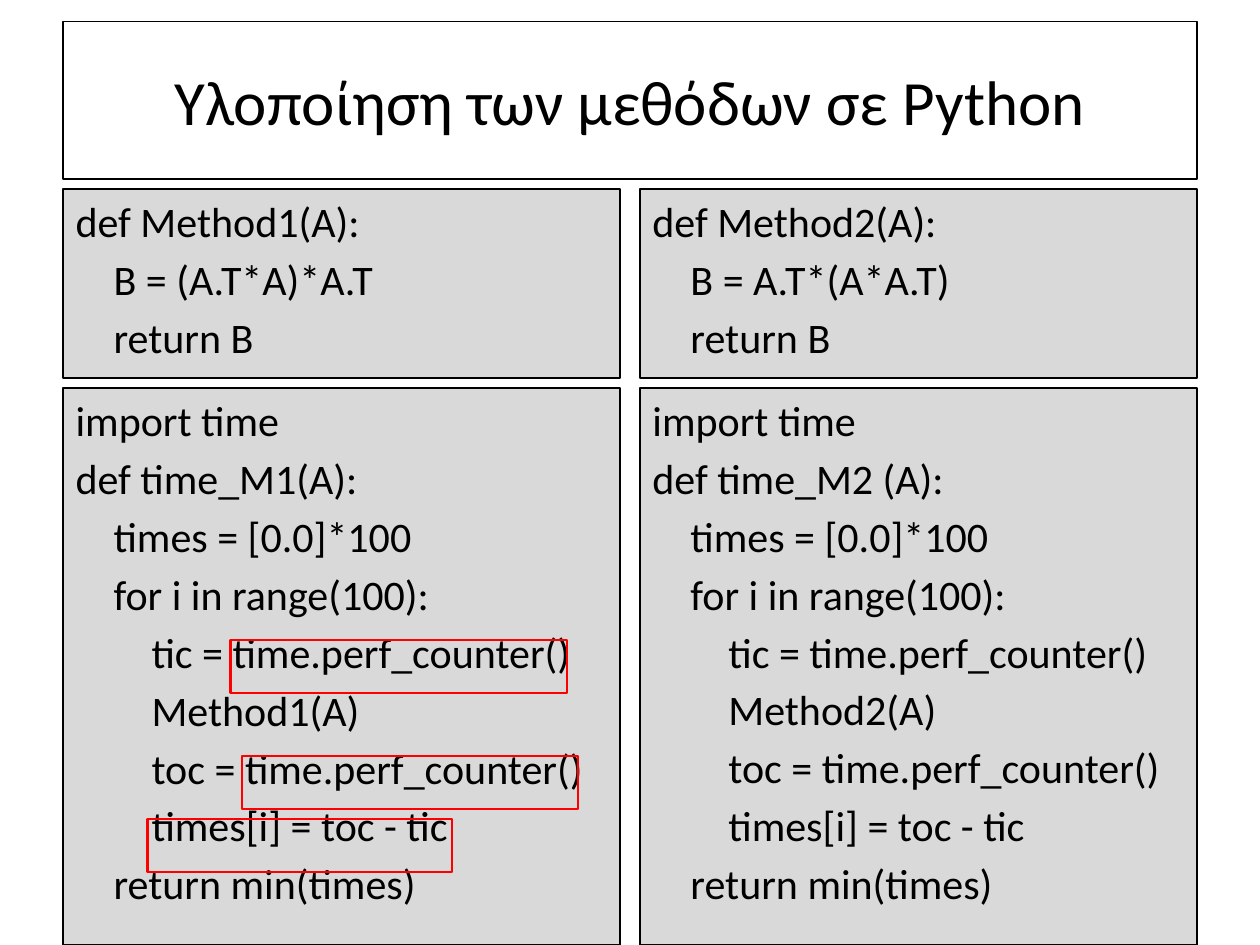
from dataclasses import dataclass

from lxml.etree import SubElement
from pptx import Presentation
from pptx.dml.color import RGBColor
from pptx.enum.shapes import MSO_SHAPE
from pptx.enum.text import MSO_ANCHOR, MSO_AUTO_SIZE, PP_ALIGN
from pptx.oxml.ns import qn
from pptx.util import Inches, Pt


@dataclass(frozen=True)
class Theme:
    """Colours, font and type sizes of the slide."""

    font: str = "Calibri"
    ink: RGBColor = RGBColor(0, 0, 0)
    panel: RGBColor = RGBColor(0xD9, 0xD9, 0xD9)
    highlight: RGBColor = RGBColor(0xFF, 0, 0)
    title_size: float = 36
    code_size: float = 24
    code_gap: float = 4.3
    code_indent: float = 0.38


THEME = Theme()
LEFT_COLUMN, RIGHT_COLUMN = 0.5, 5.08
COLUMN_WIDTH = 4.42
METHOD_ROW = (1.5, 1.5)
TIMING_ROW = (3.08, 4.42)
HIGHLIGHT_HEIGHT = 0.42
HIGHLIGHTS = [(1.17, 6.5, 2.42), (1.83, 5.08, 2.67), (1.92, 6, 2.67)]

METHOD_CODE = """def Method{number}(A):
    B = {product}
    return B"""

TIMING_CODE = """import time
def {signature}:
    times = [0.0]*100
    for i in range(100):
        tic = time.perf_counter()
        Method{number}(A)
        toc = time.perf_counter()
        times[i] = toc - tic
    return min(times)"""


def place(shape, left, top, width, height):
    """Move and size a shape, in inches."""
    shape.left, shape.top = Inches(left), Inches(top)
    shape.width, shape.height = Inches(width), Inches(height)


def outline(shape, color=THEME.ink, width=0.75, fill=None):
    """Give a shape its border and its fill, if any."""
    shape.line.color.rgb = color
    shape.line.width = Pt(width)
    if fill is None:
        shape.fill.background()
    else:
        shape.fill.solid()
        shape.fill.fore_color.rgb = fill


def write_text(shape, text, size, align=PP_ALIGN.LEFT, anchor=MSO_ANCHOR.TOP, gap=0, indent=0):
    """Write each line of text as a formatted paragraph without a bullet."""
    frame = shape.text_frame
    frame.word_wrap = True
    frame.auto_size = MSO_AUTO_SIZE.NONE
    frame.vertical_anchor = anchor
    for index, line in enumerate(text.split("\n")):
        paragraph = frame.add_paragraph() if index else frame.paragraphs[0]
        paragraph.alignment = align
        paragraph.space_before = Pt(gap if index else 0)
        properties = paragraph._p.get_or_add_pPr()
        properties.set("marL", str(Inches(indent)))
        properties.set("indent", str(-Inches(indent)))
        SubElement(properties, qn("a:buNone"))
        run = paragraph.add_run()
        run.text = line
        run.font.name = THEME.font
        run.font.size = Pt(size)
        run.font.color.rgb = THEME.ink


def add_rectangle(slide, left, top, width, height):
    """Add a rectangle without a shadow."""
    shape = slide.shapes.add_shape(
        MSO_SHAPE.RECTANGLE, Inches(left), Inches(top), Inches(width), Inches(height)
    )
    shape.shadow.inherit = False
    return shape


def fill_title(slide, text):
    """Frame the title placeholder and write the title."""
    title = slide.shapes.title
    place(title, LEFT_COLUMN, 0.17, 9, 1.25)
    outline(title)
    write_text(title, text, THEME.title_size, align=PP_ALIGN.CENTER, anchor=MSO_ANCHOR.MIDDLE)


def fill_code_panel(shape, code):
    """Turn a shape into a grey panel of code."""
    outline(shape, fill=THEME.panel)
    write_text(shape, code, THEME.code_size, gap=THEME.code_gap, indent=THEME.code_indent)


def add_code_row(slide, placeholder, row, left_code, right_code):
    """Fill one row: a body placeholder at left and a rectangle at right."""
    top, height = row
    place(placeholder, LEFT_COLUMN, top, COLUMN_WIDTH, height)
    fill_code_panel(placeholder, left_code)
    fill_code_panel(add_rectangle(slide, RIGHT_COLUMN, top, COLUMN_WIDTH, height), right_code)


def main():
    """Build the slide and save it."""
    presentation = Presentation()
    presentation.slide_width, presentation.slide_height = Inches(10), Inches(7.5)
    slide = presentation.slides.add_slide(presentation.slide_layouts.get_by_name("Two Content"))
    fill_title(slide, "Υλοποίηση των μεθόδων σε Python")
    add_code_row(
        slide,
        slide.placeholders[1],
        METHOD_ROW,
        METHOD_CODE.format(number=1, product="(A.T*A)*A.T"),
        METHOD_CODE.format(number=2, product="A.T*(A*A.T)"),
    )
    add_code_row(
        slide,
        slide.placeholders[2],
        TIMING_ROW,
        TIMING_CODE.format(number=1, signature="time_M1(A)"),
        TIMING_CODE.format(number=2, signature="time_M2 (A)"),
    )
    for left, top, width in HIGHLIGHTS:
        frame = add_rectangle(slide, left, top, width, HIGHLIGHT_HEIGHT)
        outline(frame, color=THEME.highlight, width=1.25)
    presentation.save("out.pptx")


if __name__ == "__main__":
    main()
